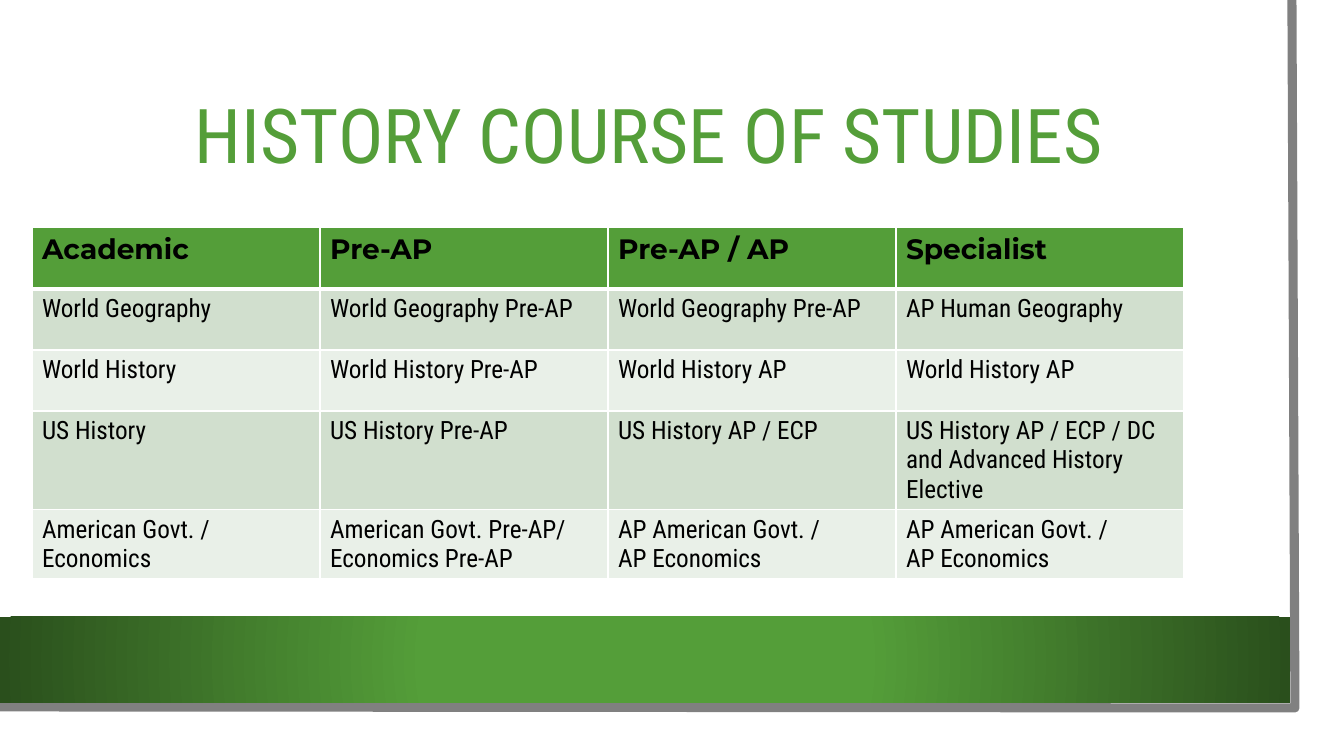
from pptx import Presentation
from pptx import util as u
from pptx.dml.color import RGBColor
from pptx.enum import shapes, text
from pptx.oxml import parse_xml
from pptx.oxml.ns import nsdecls

PX = u.Inches(1) / 100.8
GREEN = RGBColor(0x54, 0x9E, 0x39)
DARK = RGBColor(0x2A, 0x4F, 0x1C)
BAND = RGBColor(0xD1, 0xDF, 0xCE)
PALE = RGBColor(0xE9, 0xF0, 0xE8)
GREY = RGBColor(0x80, 0x80, 0x80)
WHITE = RGBColor(0xFF, 0xFF, 0xFF)
BLACK = RGBColor(0, 0, 0)
HEAD = {"name": "Montserrat", "size": u.Pt(20), "bold": True}
BODY = {"name": "Roboto Condensed", "size": u.Pt(18), "bold": False}
TITLE = {"name": "Roboto Condensed", "size": u.Pt(54), "bold": False}
ROWS = [
    ["Academic", "Pre-AP", "Pre-AP / AP", "Specialist"],
    ["World Geography", "World Geography Pre-AP", "World Geography Pre-AP",
     "AP Human Geography"],
    ["World History", "World History Pre-AP", "World History AP",
     "World History AP"],
    ["US History", "US History Pre-AP", "US History AP / ECP",
     "US History AP / ECP / DC and Advanced History Elective"],
    ["American Govt. / Economics", "American Govt. Pre-AP/ Economics Pre-AP",
     "AP American Govt. /\nAP Economics", "AP American Govt. /\nAP Economics"],
]


def px(*nums):
    """Turn pixel lengths into EMU."""
    return [round(n * PX) for n in nums]


def style(para, form, color):
    """Set the font of a paragraph from format values."""
    for key, val in form.items():
        setattr(para.font, key, val)
    para.font.color.rgb = color


def add_box(slide, *box):
    """Add a white rectangle with no outline or shadow."""
    rect = slide.shapes.add_shape(shapes.MSO_SHAPE.RECTANGLE, *px(*box))
    rect.shadow.inherit = False
    rect.fill.solid()
    rect.fill.fore_color.rgb = WHITE
    rect.line.fill.background()
    return rect


def add_strip(slide, *box):
    """Add a bar with a radial gradient from green to dark green."""
    strip = add_box(slide, *box)
    stops = "".join(
        f'<a:gs pos="{pos}"><a:srgbClr val="{color}"/></a:gs>'
        for pos, color in [(34000, GREEN), (100000, DARK)])
    grad = parse_xml(
        f'<a:gradFill {nsdecls("a")} rotWithShape="1"><a:gsLst>{stops}</a:gsLst>'
        '<a:path path="circle"><a:fillToRect l="50000" t="50000" r="50000" '
        'b="50000"/></a:path></a:gradFill>')
    props = strip._element.spPr
    props.replace(props.find("{*}solidFill"), grad)


def add_edge(slide, start, *points):
    """Draw the open grey line along the page edge."""
    build = slide.shapes.build_freeform(*start, scale=PX)
    build.add_line_segments(points, close=False)
    edge = build.convert_to_shape()
    edge.shadow.inherit = False
    edge.fill.background()
    edge.line.color.rgb = GREY
    edge.line.width = u.Pt(6.5)


def set_title(slide, words, *box):
    """Fill the title placeholder and bring it to the front."""
    title = slide.shapes.title
    slide.shapes._spTree.append(title._element)
    for key, val in zip(("left", "top", "width", "height"), px(*box)):
        setattr(title, key, val)
    title.text_frame.text = words
    title.text_frame.vertical_anchor = text.MSO_ANCHOR.MIDDLE
    para = title.text_frame.paragraphs[0]
    para.alignment = text.PP_ALIGN.CENTER
    para.line_spacing = 0.9
    style(para, TITLE, GREEN)


def set_lines(cell, row):
    """Give a cell white borders, thick below the header."""
    thick = {"T": row == 1, "B": row == 0}
    for side in "LRTB":
        width = u.Pt(3 if thick.get(side) else 1)
        cell._tc.get_or_add_tcPr().append(parse_xml(
            f'<a:ln{side} {nsdecls("a")} w="{width}"><a:solidFill>'
            f'<a:srgbClr val="{WHITE}"/></a:solidFill></a:ln{side}>'))


def add_grid(slide, rows, left, top, wide, high):
    """Add the course table with a green header and banded rows."""
    count = len(rows[0])
    grid = slide.shapes.add_table(
        len(rows), count, *px(left, top, wide * count, high * len(rows))).table
    for col in grid.columns:
        col.width = px(wide)[0]
    for r, words in enumerate(rows):
        grid.rows[r].height = px(high if r else high + 1)[0]
        for c, word in enumerate(words):
            cell = grid.cell(r, c)
            set_lines(cell, r)
            cell.fill.solid()
            cell.fill.fore_color.rgb = (BAND if r % 2 else PALE) if r else GREEN
            cell.text = word
            for para in cell.text_frame.paragraphs:
                style(para, BODY if r else HEAD, BLACK)


def main():
    """Build and save the slide."""
    deck = Presentation()
    deck.slide_width, deck.slide_height = px(1344, 756)
    slide = deck.slides.add_slide(deck.slide_layouts[5])
    add_box(slide, 0, 0, 1320, 733)
    add_edge(slide, (1292, 0), (1295, 708), (0, 707))
    add_strip(slide, 0, 617, 1290, 86)
    set_title(slide, "HISTORY COURSE OF STUDIES", 76, 76, 1146, 127)
    add_grid(slide, ROWS, 32, 227, 288, 61)
    deck.save("out.pptx")


if __name__ == "__main__":
    main()
